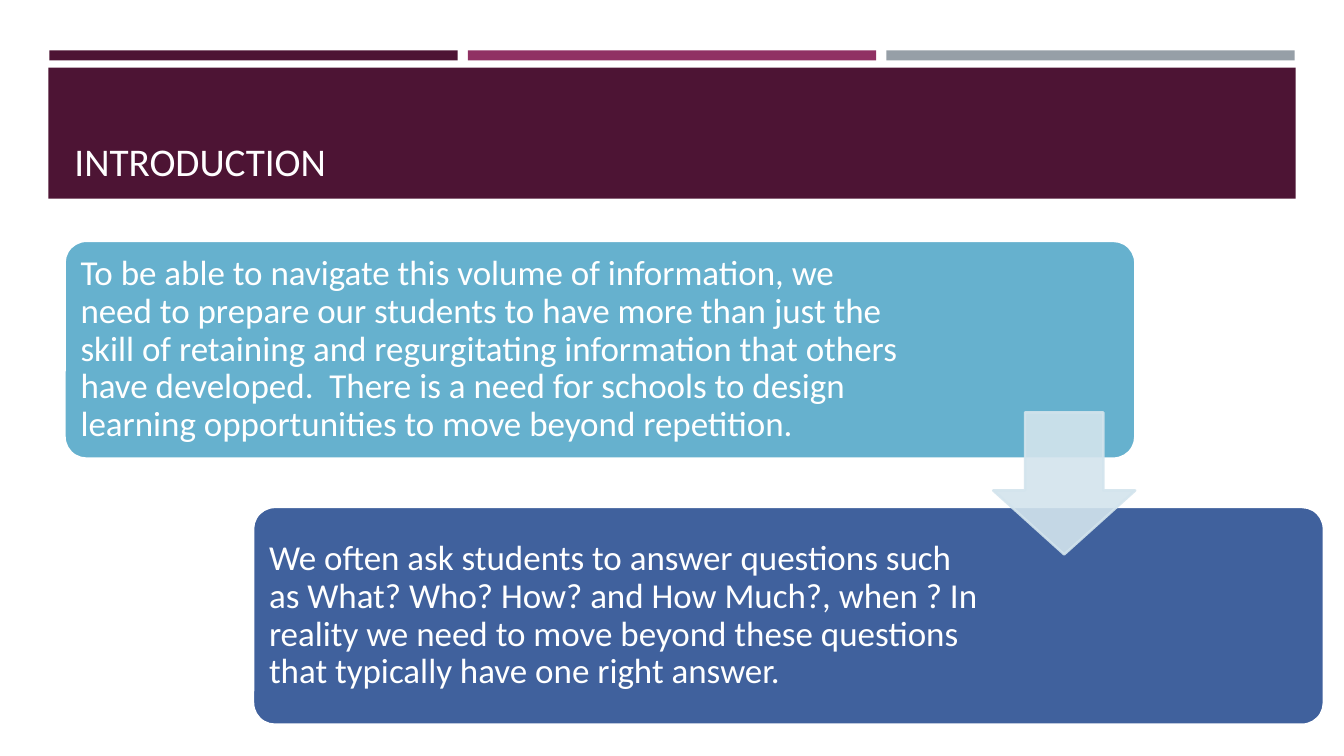
"""Build the introduction slide: a title band and two stepped cards joined by an arrow."""
from lxml import etree
from pptx import Presentation
from pptx.dml.color import RGBColor
from pptx.enum.shapes import MSO_SHAPE
from pptx.enum.text import MSO_ANCHOR
from pptx.oxml.ns import qn
from pptx.util import Pt

RECT, ROUND, DOWN = MSO_SHAPE.RECTANGLE, MSO_SHAPE.ROUNDED_RECTANGLE, MSO_SHAPE.DOWN_ARROW
MIDDLE, BOTTOM = MSO_ANCHOR.MIDDLE, MSO_ANCHOR.BOTTOM
WHITE = RGBColor(0xFF, 0xFF, 0xFF)
CREAM = RGBColor(0xFF, 0xFE, 0xFF)
PLUM = RGBColor(0x4D, 0x14, 0x34)
ROSE = RGBColor(0x90, 0x31, 0x63)
GREY = RGBColor(0x96, 0x9F, 0xA7)
SKY = RGBColor(0x66, 0xB1, 0xCE)
NAVY = RGBColor(0x40, 0x61, 0x9D)
PALE = RGBColor(0xD3, 0xE4, 0xED)

TITLE = "INTRODUCTION"
STRIPES = [PLUM, ROSE, GREY]
CARDS = [
    ("To be able to navigate this volume of information, we need to prepare our students "
     "to have more than just the skill of retaining and regurgitating information that "
     "others have developed.  There is a need for schools to design learning "
     "opportunities to move beyond repetition.", SKY, 839),
    ("We often ask students to answer questions such as What? Who? How? and How Much?, "
     "when ? In reality we need to move beyond these questions that typically have one "
     "right answer.", NAVY, 722),
]
PX = 9144
CARD_X, CARD_Y, CARD_W, CARD_H = 64, 239, 1062, 216
STEP_X, STEP_Y, PAD = 187, 264, 6
ARROW = 141


def scale(*box):
    return [PX * n for n in box]


def draw(slide, kind, box, fill, edge=None, adjust=()):
    shape = slide.shapes.add_shape(kind, *scale(*box))
    shape.shadow.inherit = False
    shape.fill.solid()
    shape.fill.fore_color.rgb = fill
    if edge is None:
        shape.line.fill.background()
    else:
        shape.line.color.rgb = edge
        shape.line.width = Pt(1.75)
    for i, part in enumerate(adjust):
        shape.adjustments[i] = part
    return shape


def write(slide, box, text, size, color, frame, para):
    area = slide.shapes.add_textbox(*scale(*box)).text_frame
    line = area.paragraphs[0]
    run = line.add_run()
    run.text = text
    run.font.color.rgb = color
    font = {"name": "Calibri", "size": Pt(size)}
    for item, style in ((area, frame), (line, para), (run.font, font)):
        for key, value in style.items():
            setattr(item, key, value)


def fade(shape, percent):
    for color in shape.element.spPr.iter(qn("a:srgbClr")):
        etree.SubElement(color, qn("a:alpha"), val=str(percent * 1000))


def main():
    deck = Presentation()
    deck.slide_width, deck.slide_height = scale(1333, 750)
    slide = deck.slides.add_slide(deck.slide_layouts[6])

    for i, color in enumerate(STRIPES):
        draw(slide, RECT, (49 + 415 * i, 50, 405, 10), color)
    draw(slide, RECT, (48, 67, 1237, 130), PLUM)
    write(slide, (64, 77, 1206, 111), TITLE, 28, CREAM,
          {"word_wrap": True, "vertical_anchor": BOTTOM}, {})

    sides = ("left", "top", "right", "bottom")
    frame = {f"margin_{side}": 10 * PX for side in sides}
    frame |= {"word_wrap": True, "vertical_anchor": MIDDLE}
    for i, (text, color, width) in enumerate(CARDS):
        x, y = CARD_X + STEP_X * i, CARD_Y + STEP_Y * i
        draw(slide, ROUND, (x, y, CARD_W, CARD_H), color, WHITE, [0.1])
        write(slide, (x + PAD, y + PAD, width, CARD_H - 2 * PAD), text, 25, WHITE,
              frame, {"line_spacing": 0.9})

    left = CARD_X + CARD_W - ARROW
    arrow = draw(slide, DOWN, (left, 409, ARROW, ARROW), PALE, PALE, [0.55, 0.45])
    fade(arrow, 90)
    deck.save("out.pptx")


if __name__ == "__main__":
    main()
